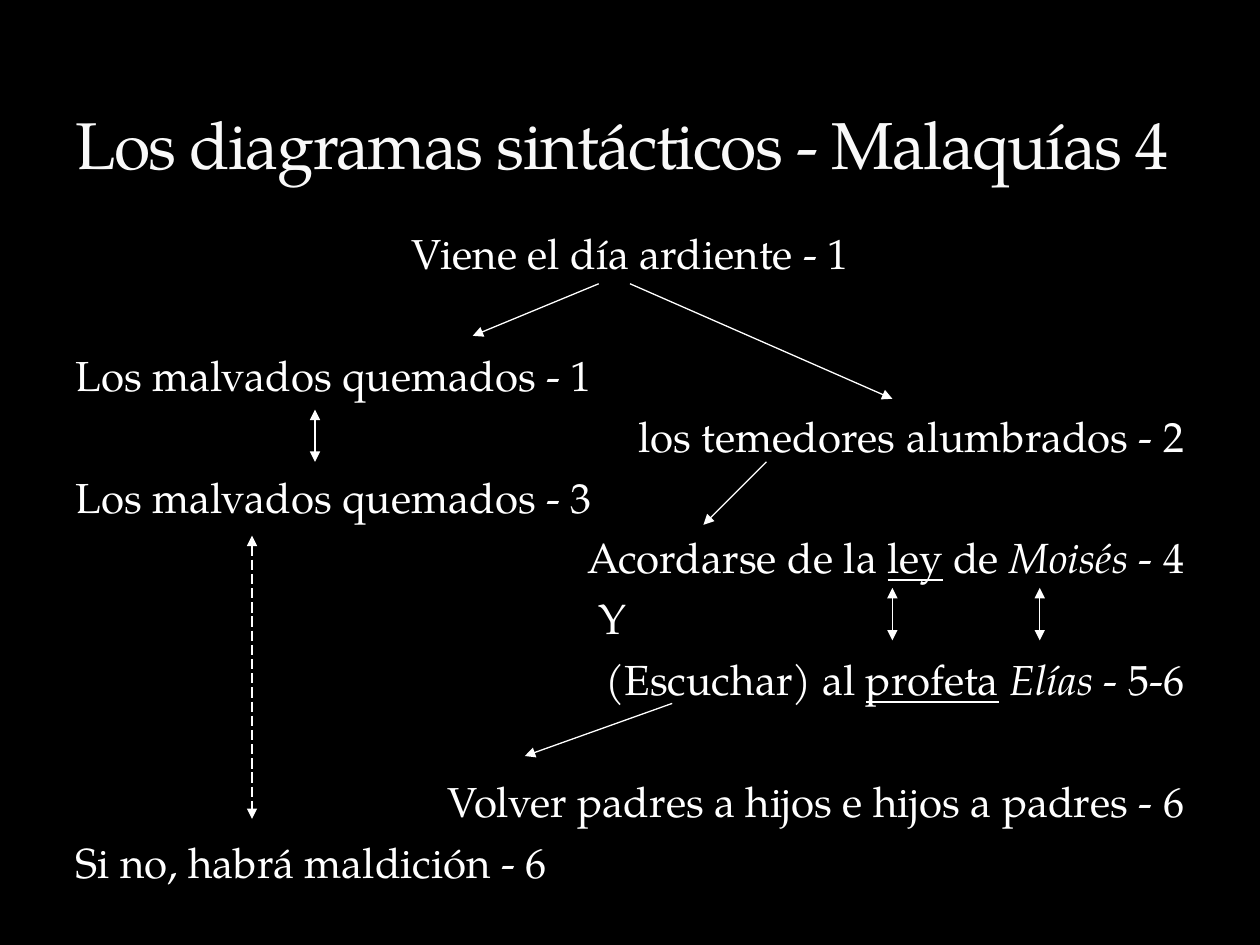
import pptx
import pptx.util
import pptx.dml.color
import pptx.enum.dml
import pptx.enum.shapes
import pptx.enum.text
import pptx.oxml.ns
from lxml import etree

Cm = pptx.util.Cm
Pt = pptx.util.Pt
RGB = pptx.dml.color.RGBColor.from_string
ALIGN = pptx.enum.text.PP_ALIGN
ANCHOR = pptx.enum.text.MSO_ANCHOR
qn = pptx.oxml.ns.qn

COLORS = {"background": "000000", "title": "F9F9F9", "text": "FFFFFF"}
FONT = "TeX Gyre Pagella"


def add_run(p, text, size=24, color="text", italic=False, underline=False, spacing=None):
    r = p.add_run()
    r.text = text
    r.font.name = FONT
    r.font.size = Pt(size)
    r.font.italic = italic
    r.font.underline = underline
    r.font.color.rgb = RGB(COLORS[color])
    if spacing is not None:
        r._r.get_or_add_rPr().set("spc", str(spacing))


prs = pptx.Presentation()
prs.slide_width, prs.slide_height = Cm(25.4), Cm(19.05)
s = prs.slides.add_slide(prs.slide_layouts[1])
s.background.fill.solid()
s.background.fill.fore_color.rgb = RGB(COLORS["background"])

title, body = s.shapes.title, s.placeholders[1]
for sp, top, height, anchor in [
    (title, 0.43, 3.39, ANCHOR.BOTTOM),
    (body, 4.45, 14.17, ANCHOR.TOP),
]:
    sp.left, sp.top, sp.width, sp.height = Cm(1.27), Cm(top), Cm(22.86), Cm(height)
    tf = sp.text_frame
    tf.word_wrap = True
    tf.auto_size = pptx.enum.text.MSO_AUTO_SIZE.NONE
    tf.vertical_anchor = anchor

p = title.text_frame.paragraphs[0]
p.alignment = ALIGN.LEFT
add_run(p, "Los diagramas sintácticos - Malaquías 4", size=37.8, color="title", spacing=-100)

LINE_GAP, WIDE_GAP = 6, 41
UNDER, ITALIC = {"underline": True}, {"italic": True}
lines = [
    (ALIGN.CENTER, LINE_GAP, 0, [("Viene el día ardiente - 1", {})]),
    (ALIGN.LEFT, WIDE_GAP, 0, [("Los malvados quemados - 1", {})]),
    (ALIGN.RIGHT, LINE_GAP, 0, [("los temedores alumbrados - 2", {})]),
    (ALIGN.LEFT, LINE_GAP, 0, [("Los malvados quemados - 3", {})]),
    (ALIGN.RIGHT, LINE_GAP, 0, [("Acordarse de la ", {}), ("ley", UNDER), (" de ", {}),
                                ("Moisés", ITALIC), (" - 4", {})]),
    (ALIGN.LEFT, LINE_GAP, 10.54, [("Y", {})]),
    (ALIGN.RIGHT, LINE_GAP, 0, [("(Escuchar) al ", {}), ("profeta", UNDER), (" ", {}),
                                ("Elías", ITALIC), (" - 5-6", {})]),
    (ALIGN.RIGHT, WIDE_GAP, 0, [("Volver padres a hijos e hijos a padres - 6", {})]),
    (ALIGN.LEFT, LINE_GAP, 0, [("Si no, habrá maldición - 6", {})]),
]
tf = body.text_frame
for i, (align, gap, indent, runs) in enumerate(lines):
    p = tf.add_paragraph() if i else tf.paragraphs[0]
    p.alignment = align
    p.space_before = Pt(gap)
    pPr = p._p.get_or_add_pPr()
    pPr.set("marL", str(Cm(indent)))
    pPr.set("indent", "0")
    etree.SubElement(pPr, qn("a:buNone"))
    for text, style in runs:
        add_run(p, text, **style)

arrows = [
    (12.07, 5.72, 9.53, 6.77, False, False),
    (12.7, 5.72, 17.99, 8.04, False, False),
    (6.35, 8.26, 6.35, 9.31, True, False),
    (13.55, 14.18, 10.58, 15.24, False, False),
    (15.45, 9.31, 14.18, 10.58, False, False),
    (5.08, 10.8, 5.08, 16.51, True, True),
    (17.99, 11.85, 17.99, 12.91, True, False),
    (20.96, 11.85, 20.96, 12.91, True, False),
]
for x1, y1, x2, y2, double, dashed in arrows:
    c = s.shapes.add_connector(
        pptx.enum.shapes.MSO_CONNECTOR.STRAIGHT, Cm(x1), Cm(y1), Cm(x2), Cm(y2))
    c.line.color.rgb = RGB(COLORS["text"])
    c.line.width = Pt(0.75)
    if dashed:
        c.line.dash_style = pptx.enum.dml.MSO_LINE.LONG_DASH
    ln = c.line._get_or_add_ln()
    for end in ["headEnd", "tailEnd"] if double else ["tailEnd"]:
        etree.SubElement(ln, qn("a:" + end), type="triangle")
    etree.SubElement(c._element.spPr, qn("a:effectLst"))

prs.save("out.pptx")
